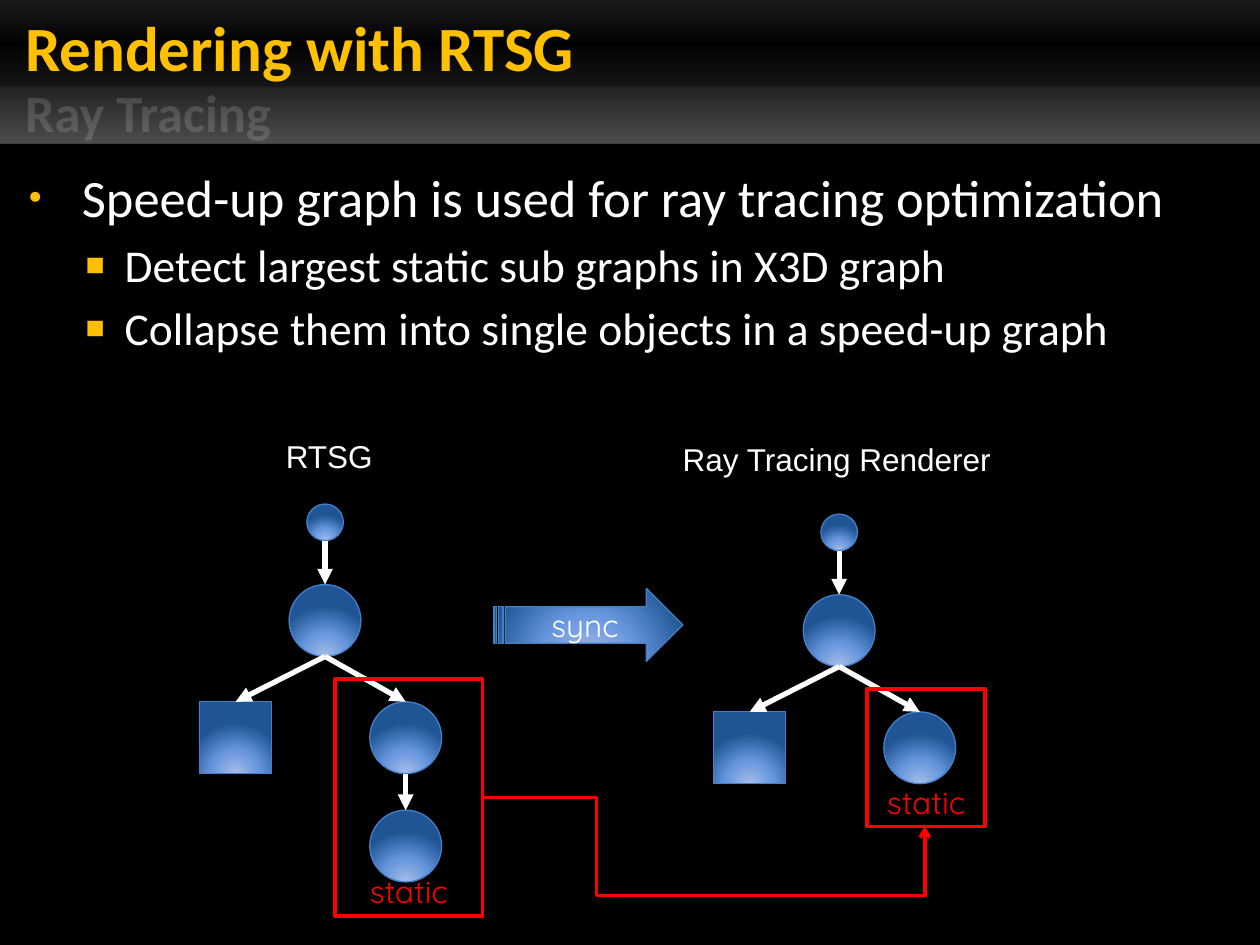
from dataclasses import dataclass

from lxml.etree import SubElement
from pptx import Presentation
from pptx.dml.color import RGBColor
from pptx.enum.shapes import MSO_CONNECTOR, MSO_SHAPE
from pptx.enum.text import MSO_ANCHOR, PP_ALIGN
from pptx.oxml import parse_xml
from pptx.oxml.ns import nsdecls, qn
from pptx.util import Inches, Pt

BLACK = RGBColor(0x00, 0x00, 0x00)
WHITE = RGBColor(0xFF, 0xFF, 0xFF)
GOLD = RGBColor(0xFF, 0xC0, 0x00)
RED = RGBColor(0xFF, 0x00, 0x00)
EDGE = RGBColor(0x44, 0x80, 0xC8)

# Gradient stops: position, colour, opacity (percent)
BAND = [(0, WHITE, 10), (31, WHITE, 0), (60, WHITE, 8), (61, WHITE, 13), (100, WHITE, 30)]
FADE = [(0, WHITE, 15), (75, WHITE, 100)]
BLUE = [(0, RGBColor(0xA7, 0xBD, 0xE7), 100), (46, RGBColor(0x68, 0x97, 0xDE), 100),
        (100, RGBColor(0x1F, 0x55, 0x95), 100)]
DOWN = '<a:lin ang="5400000" scaled="0"/>'
GLOW = '<a:path path="circle"><a:fillToRect l="50000" t="155000" r="50000" b="-55000"/></a:path>'


@dataclass
class Node:
    kind: MSO_SHAPE
    x: float    # centre
    y: float    # top
    size: float = 0.57


@dataclass
class Tree:
    dx: float
    dy: float
    nodes: list[Node]
    links: list[tuple[int, int]]


@dataclass
class Label:
    text: str
    x: float
    y: float
    w: float


@dataclass
class Point:
    text: str
    size: int
    mark: str
    left: float
    hang: float


def grad(stops: list, tail: str):
    """Gradient fill element with the given stops and direction."""
    parts = "".join(
        f'<a:gs pos="{pos * 1000}"><a:srgbClr val="{tone}">'
        f'<a:alpha val="{alpha * 1000}"/></a:srgbClr></a:gs>' for pos, tone, alpha in stops)
    return parse_xml(f'<a:gradFill {nsdecls("a")} rotWithShape="1">'
                     f'<a:gsLst>{parts}</a:gsLst>{tail}</a:gradFill>')


def style(run, size: int, face: str, tone: RGBColor, bold: bool = False) -> None:
    run.font.size, run.font.name, run.font.bold = Pt(size), face, bold
    run.font.color.rgb = tone


def add_form(slide, kind, x: float, y: float, w: float, h: float):
    form = slide.shapes.add_shape(kind, Inches(x), Inches(y), Inches(w), Inches(h))
    form.shadow.inherit = False
    return form


def add_blue(slide, kind, x: float, y: float, w: float, h: float):
    form = add_form(slide, kind, x, y, w, h)
    form._element.spPr.find(qn("a:prstGeom")).addnext(grad(BLUE, GLOW))
    form.line.color.rgb, form.line.width = EDGE, Pt(0.75)
    return form


def add_text(slide, x: float, y: float, w: float, h: float, pad: tuple, anchor=MSO_ANCHOR.TOP):
    frame = slide.shapes.add_textbox(Inches(x), Inches(y), Inches(w), Inches(h)).text_frame
    frame.word_wrap, frame.vertical_anchor = True, anchor
    (frame.margin_left, frame.margin_top,
     frame.margin_right, frame.margin_bottom) = [Inches(gap) for gap in pad]
    return frame


def put_word(form, text: str, tone: RGBColor, anchor) -> None:
    frame = form.text_frame
    frame.text, frame.vertical_anchor = text, anchor
    para = frame.paragraphs[0]
    para.alignment = PP_ALIGN.CENTER
    style(para.runs[0], 18, "Quicksand", tone)


def add_line(slide, kind, start: tuple, end: tuple, tone: RGBColor, width: int, head: str):
    line = slide.shapes.add_connector(kind, *[Inches(v) for v in (*start, *end)])
    line.line.color.rgb, line.line.width = tone, Pt(width)
    SubElement(line.line._get_or_add_ln(), qn("a:tailEnd"), type=head)
    SubElement(line._element.spPr, qn("a:effectLst"))
    return line


def add_tree(slide, tree: Tree) -> None:
    forms = [add_blue(slide, n.kind, n.x - n.size / 2 + tree.dx, n.y + tree.dy, n.size, n.size)
             for n in tree.nodes]
    for top, low in tree.links:
        a, b = tree.nodes[top], tree.nodes[low]
        line = add_line(slide, MSO_CONNECTOR.STRAIGHT,
                        (a.x + tree.dx, a.y + a.size + tree.dy),
                        (b.x + tree.dx, b.y + tree.dy), WHITE, 3, "triangle")
        if b.kind == MSO_SHAPE.RECTANGLE:
            line.end_connect(forms[low], 0)


def add_label(slide, label: Label) -> None:
    frame = add_text(slide, label.x, label.y, label.w, 0.4, (0.1, 0.05, 0.1, 0.05))
    frame.word_wrap = False
    frame.text = label.text
    style(frame.paragraphs[0].runs[0], 18, "Arial", WHITE)


def add_point(para, point: Point) -> None:
    para.text = point.text
    props = para._p.get_or_add_pPr()
    props.set("marL", str(Inches(point.left)))
    props.set("indent", str(-Inches(point.hang)))
    SubElement(SubElement(props, qn("a:buClr")), qn("a:srgbClr"), val=str(GOLD))
    SubElement(props, qn("a:buSzPct"), val="70000")
    SubElement(props, qn("a:buFont"), typeface="Arial")
    SubElement(props, qn("a:buChar"), char=point.mark)
    style(para.runs[0], point.size, "Calibri", WHITE)


def add_frame(slide, x: float, y: float, w: float, h: float) -> None:
    form = add_form(slide, MSO_SHAPE.RECTANGLE, x, y, w, h)
    form.fill.background()
    form.line.color.rgb, form.line.width = RED, Pt(2)
    put_word(form, "static", RED, MSO_ANCHOR.BOTTOM)


BALL, BOX = MSO_SHAPE.OVAL, MSO_SHAPE.RECTANGLE
NODES = [Node(BALL, 2.58, 4, 0.29), Node(BALL, 2.58, 4.64), Node(BOX, 1.87, 5.57),
         Node(BALL, 3.22, 5.57), Node(BALL, 3.22, 6.43)]
LINKS = [(0, 1), (1, 2), (1, 3), (3, 4)]
TREES = [Tree(0, 0, NODES, LINKS), Tree(4.08, 0.08, NODES[:4], LINKS[:3])]
LABELS = [Label("RTSG", 2.17, 3.42, 0.9), Label("Ray Tracing Renderer", 5.32, 3.44, 2.67)]
POINTS = [
    Point("Speed-up graph is used for ray tracing optimization", 30, "•", 0.49, 0.42),
    Point("Detect largest static sub graphs in X3D graph", 26, "■", 0.83, 0.31),
    Point("Collapse them into single objects in a speed-up graph", 26, "■", 0.83, 0.31),
]


def main() -> None:
    deck = Presentation()
    deck.slide_width, deck.slide_height = Inches(10), Inches(7.5)
    slide = deck.slides.add_slide(deck.slide_layouts[6])
    slide.background.fill.solid()
    slide.background.fill.fore_color.rgb = BLACK

    # Header band with title and subtitle
    band = add_form(slide, MSO_SHAPE.RECTANGLE, 0, 0, 10, 1.14)
    band._element.spPr.find(qn("a:prstGeom")).addnext(grad(BAND, DOWN))
    band.line.fill.background()
    title = add_text(slide, 0, 0, 6.6, 0.67, (0.2, 0, 0.1, 0), MSO_ANCHOR.BOTTOM)
    title.text = "Rendering with RTSG"
    style(title.paragraphs[0].runs[0], 36, "Calibri", GOLD, True)
    sub = add_text(slide, 0, 0.65, 7.92, 0.47, (0.2, 0, 0.1, 0), MSO_ANCHOR.MIDDLE)
    sub.text = "Ray Tracing"
    run = sub.paragraphs[0].runs[0]
    style(run, 30, "Calibri", WHITE, True)
    props = run._r.get_or_add_rPr()
    props.replace(props.find(qn("a:solidFill")), grad(FADE, DOWN))

    # Bullet points
    body = add_text(slide, 0, 1.15, 9.99, 6.35, (0.16, 0.16, 0.1, 0.05))
    for i, point in enumerate(POINTS):
        para = body.add_paragraph() if i else body.paragraphs[0]
        if i:
            para.space_before = Pt(5)
        add_point(para, point)

    # Scene graphs and their labels
    for tree in TREES:
        add_tree(slide, tree)
    for label in LABELS:
        add_label(slide, label)

    # Sync arrow
    sync = add_blue(slide, MSO_SHAPE.STRIPED_RIGHT_ARROW, 3.92, 4.67, 1.5, 0.58)
    put_word(sync, "sync", WHITE, MSO_ANCHOR.MIDDLE)

    # Static parts and the bent arrow between them
    add_frame(slide, 2.66, 5.39, 1.17, 1.88)
    add_frame(slide, 6.88, 5.47, 0.94, 1.09)
    bent = add_line(slide, MSO_CONNECTOR.ELBOW, (3.83, 6.33), (7.34, 6.56), RED, 2, "arrow")
    geom = bent._element.spPr.find(qn("a:prstGeom"))
    geom.set("prst", "bentConnector4")
    for name, value in (("adj1", 25800), ("adj2", 338400)):
        SubElement(geom.find(qn("a:avLst")), qn("a:gd"), name=name, fmla=f"val {value}")

    deck.save("out.pptx")


if __name__ == "__main__":
    main()
